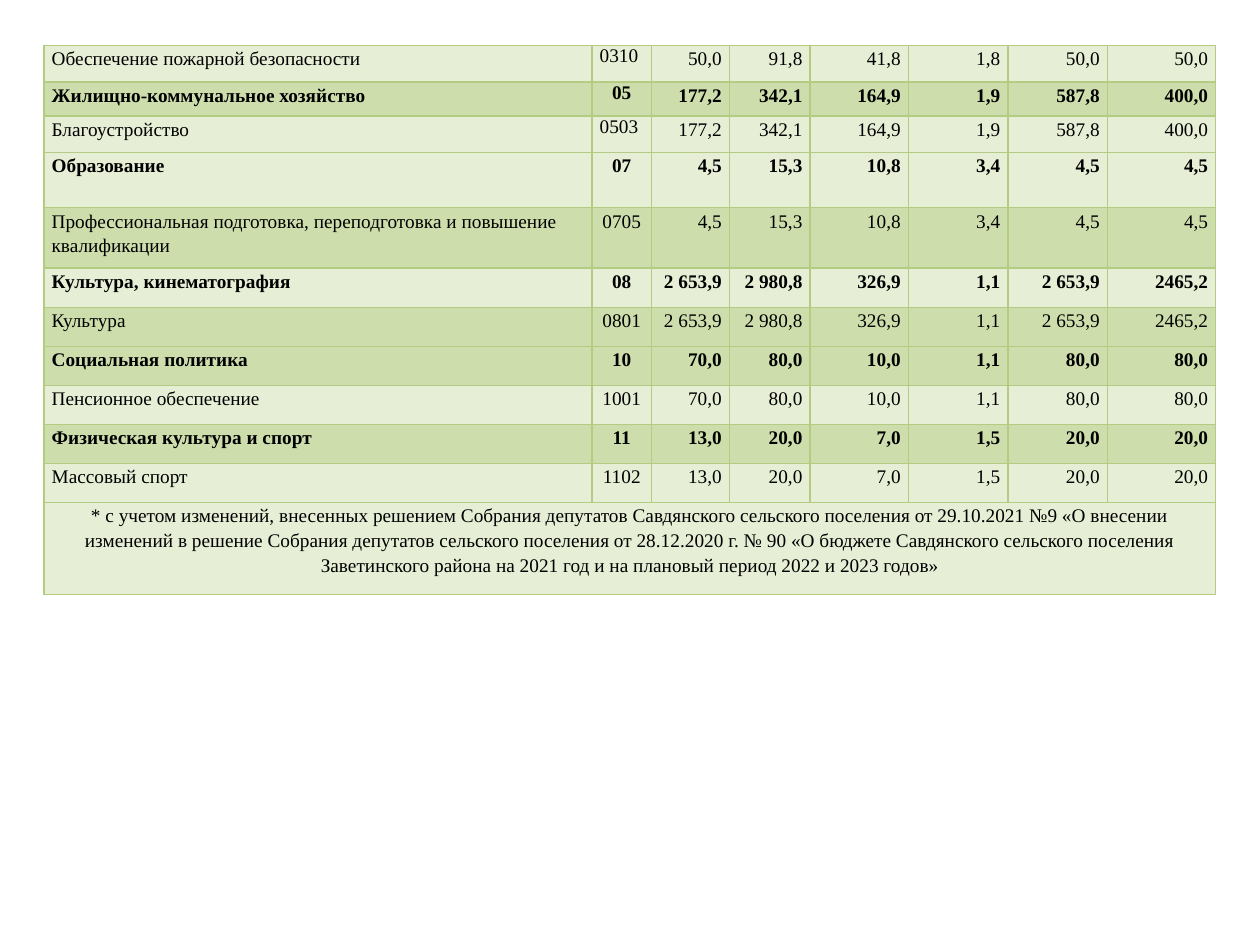
from dataclasses import dataclass

from lxml.etree import SubElement
from pptx import Presentation
from pptx.dml.color import RGBColor
from pptx.enum.text import PP_ALIGN
from pptx.oxml.ns import qn
from pptx.table import Table, _Cell
from pptx.util import Inches, Pt

LIGHT = "E6EED5"
DARK = "CDDDAC"
BORDER = "B3CC82"
COLUMN_WIDTHS = [4.35, 0.47, 0.62, 0.64, 0.78, 0.79, 0.79, 0.86]
NOTE_HEIGHT = 0.73
NOTE = (
    "* с учетом изменений, внесенных решением Собрания депутатов Савдянского "
    "сельского поселения от 29.10.2021 №9 «О внесении изменений в решение Собрания "
    "депутатов сельского поселения от 28.12.2020 г. № 90 «О бюджете Савдянского "
    "сельского поселения Заветинского района на 2021 год и на плановый период "
    "2022 и 2023 годов»"
)


@dataclass
class BudgetRow:
    title: str
    code: str
    values: list[str]
    fill: str = LIGHT
    height: float = 0.31
    code_align: PP_ALIGN = PP_ALIGN.CENTER
    code_spacing: float = 1.15

    @property
    def is_section(self) -> bool:
        return len(self.code) == 2


HOUSING = ["177,2", "342,1", "164,9", "1,9", "587,8", "400,0"]
EDUCATION = ["4,5", "15,3", "10,8", "3,4", "4,5", "4,5"]
CULTURE = ["2 653,9", "2 980,8", "326,9", "1,1", "2 653,9", "2465,2"]
SOCIAL = ["70,0", "80,0", "10,0", "1,1", "80,0", "80,0"]
SPORT = ["13,0", "20,0", "7,0", "1,5", "20,0", "20,0"]

BUDGET_ROWS = [
    BudgetRow("Обеспечение пожарной безопасности", "0310",
              ["50,0", "91,8", "41,8", "1,8", "50,0", "50,0"],
              height=0.29, code_align=PP_ALIGN.LEFT, code_spacing=1.0),
    BudgetRow("Жилищно-коммунальное хозяйство", "05", HOUSING, DARK, 0.27,
              code_spacing=1.0),
    BudgetRow("Благоустройство", "0503", HOUSING,
              height=0.29, code_align=PP_ALIGN.LEFT, code_spacing=1.0),
    BudgetRow("Образование", "07", EDUCATION, height=0.44),
    BudgetRow("Профессиональная подготовка, переподготовка и повышение квалификации",
              "0705", EDUCATION, DARK, 0.48),
    BudgetRow("Культура, кинематография", "08", CULTURE),
    BudgetRow("Культура", "0801", CULTURE, DARK),
    BudgetRow("Социальная политика", "10", SOCIAL, DARK),
    BudgetRow("Пенсионное обеспечение", "1001", SOCIAL),
    BudgetRow("Физическая культура и спорт", "11", SPORT, DARK),
    BudgetRow("Массовый спорт", "1102", SPORT),
]


def color(value: str) -> RGBColor:
    return RGBColor.from_string(value)


def style_cell(cell: _Cell, fill: str) -> None:
    cell.margin_left = cell.margin_right = Inches(0.06)
    cell.margin_top = cell.margin_bottom = Inches(0)
    properties = cell._tc.get_or_add_tcPr()
    for side in ("a:lnL", "a:lnR", "a:lnT", "a:lnB"):
        line = SubElement(properties, qn(side), w=str(Pt(1)))
        line_fill = SubElement(line, qn("a:solidFill"))
        SubElement(line_fill, qn("a:srgbClr"), val=BORDER)
    cell.fill.solid()
    cell.fill.fore_color.rgb = color(fill)


def write_text(cell: _Cell, text: str, *, align: PP_ALIGN = PP_ALIGN.LEFT,
               bold: bool = False, spacing: float = 1.15) -> None:
    para = cell.text_frame.paragraphs[0]
    para.alignment = align
    para.line_spacing = spacing
    span = para.add_run()
    span.text = text
    span.font.name = "Times New Roman"
    span.font.size = Pt(11)
    span.font.bold = bold
    span.font.color.rgb = color("000000")


def draw_budget_row(table: Table, index: int, row: BudgetRow) -> None:
    table.rows[index].height = Inches(row.height)
    title, code, *amounts = table.rows[index].cells
    for cell in (title, code, *amounts):
        style_cell(cell, row.fill)
    write_text(title, row.title, bold=row.is_section)
    write_text(code, row.code, align=row.code_align, bold=row.is_section,
               spacing=row.code_spacing)
    for cell, value in zip(amounts, row.values):
        write_text(cell, value, align=PP_ALIGN.RIGHT, bold=row.is_section)


def draw_note(table: Table, index: int) -> None:
    table.rows[index].height = Inches(NOTE_HEIGHT)
    cells = list(table.rows[index].cells)
    for cell in cells:
        style_cell(cell, LIGHT)
    cells[0].merge(cells[-1])
    write_text(cells[0], NOTE, align=PP_ALIGN.CENTER)


def main() -> None:
    deck = Presentation()
    deck.slide_width = Inches(10)
    deck.slide_height = Inches(7.5)
    page = deck.slides.add_slide(deck.slide_layouts[6])
    height = sum(row.height for row in BUDGET_ROWS) + NOTE_HEIGHT
    table = page.shapes.add_table(
        len(BUDGET_ROWS) + 1, len(COLUMN_WIDTHS), Inches(0.35), Inches(0.36),
        Inches(sum(COLUMN_WIDTHS)), Inches(height)).table
    table.first_row = False
    table.horz_banding = False
    for column, width in zip(table.columns, COLUMN_WIDTHS):
        column.width = Inches(width)
    for index, row in enumerate(BUDGET_ROWS):
        draw_budget_row(table, index, row)
    draw_note(table, len(BUDGET_ROWS))
    deck.save("out.pptx")


if __name__ == "__main__":
    main()
